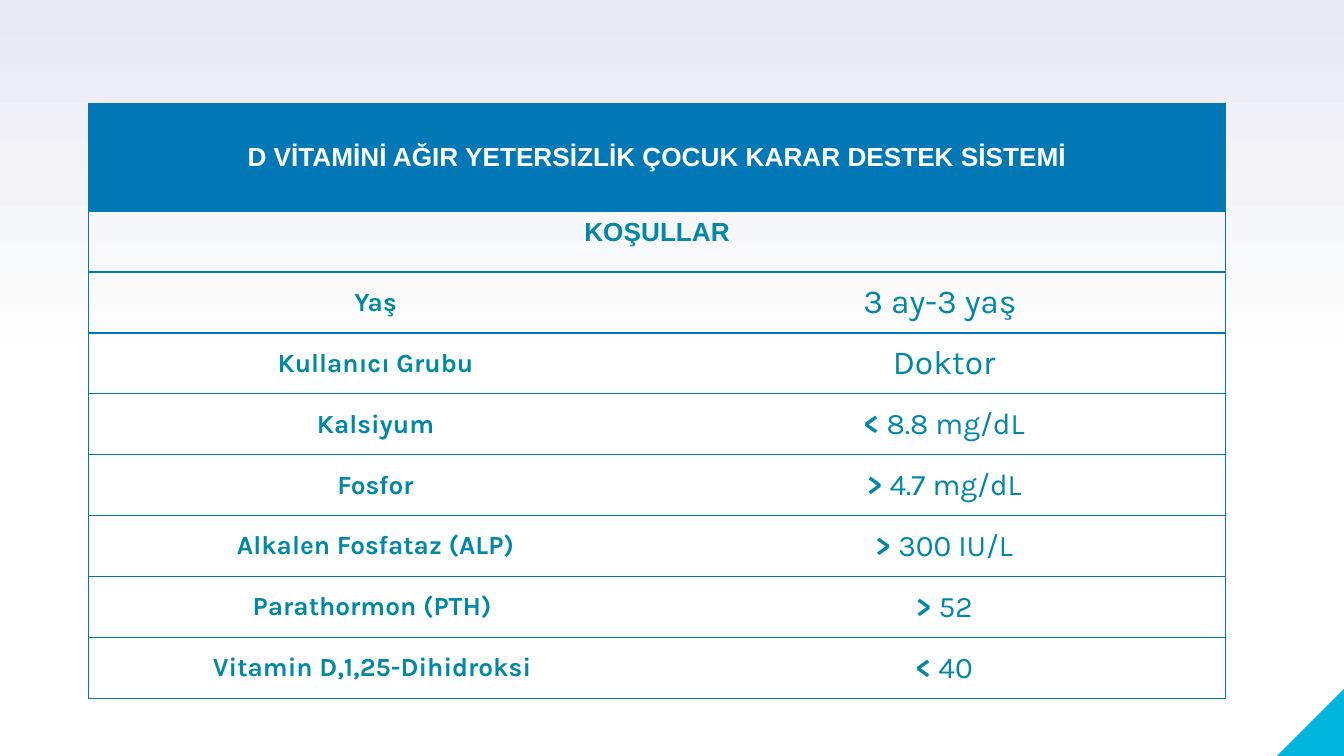
from lxml.etree import SubElement
from pptx import Presentation
from pptx.dml.color import RGBColor
from pptx.enum.shapes import MSO_SHAPE as Shape
from pptx.enum.text import MSO_ANCHOR as Anchor, PP_ALIGN as Align
from pptx.oxml.ns import qn
from pptx.util import Inches, Pt

COLORS = {"header": "0078B5", "text": "0088A6", "corner": "00B5DD",
          "white": "FFFFFF", "haze": "E9EAF2"}
TITLE = "D VİTAMİNİ AĞIR YETERSİZLİK ÇOCUK KARAR DESTEK SİSTEMİ"
SUBTITLE = "KOŞULLAR"
CONDITIONS = [
    ("Yaş", "", "3 ay-3 yaş ", 18),
    ("Kullanıcı Grubu", "", "Doktor", 18),
    ("Kalsiyum", "<", " 8.8 mg/dL", 16),
    ("Fosfor", ">", " 4.7 mg/dL", 16),
    ("Alkalen Fosfataz (ALP)", ">", " 300 IU/L", 16),
    ("Parathormon (PTH) ", ">", " 52", 16),
    ("Vitamin D,1,25-Dihidroksi ", "<", " 40", 16),
]
WIDTH = 10
HEIGHT = WIDTH * 9 / 16
LEFT, TOP, TABLE_HEIGHT = 0.66, 0.77, 4.43
COLUMNS = (4.27, 4.19)
HEADER_HEIGHT = 0.8
CORNER = 0.51


def rgb(name):
    return RGBColor.from_string(COLORS[name])


def draw_borders(cell, sides):
    properties = cell._tc.get_or_add_tcPr()
    for side in "LRTB":
        line = SubElement(properties, qn(f"a:ln{side}"), w=str(Pt(0.75)))
        if side in sides:
            fill = SubElement(line, qn("a:solidFill"))
            SubElement(fill, qn("a:srgbClr"), val=COLORS["header"])
        else:
            SubElement(line, qn("a:noFill"))


def write(cell, pieces, color="text", anchor=Anchor.MIDDLE):
    cell.vertical_anchor = anchor
    para = cell.text_frame.paragraphs[0]
    para.alignment = Align.CENTER
    for text, font, size, bold in pieces:
        span = para.add_run()
        span.text = text
        span.font.name = font
        span.font.size = Pt(size)
        span.font.bold = bold
        span.font.color.rgb = rgb(color)


deck = Presentation()
deck.slide_width, deck.slide_height = Inches(WIDTH), Inches(HEIGHT)
page = deck.slides.add_slide(deck.slide_layouts[6])

backdrop = page.background.fill
backdrop.gradient()
backdrop.gradient_angle = 90
for stop, (position, color) in zip(backdrop.gradient_stops, [(0.5, "white"), (1, "haze")]):
    stop.position = position
    stop.color.rgb = rgb(color)

corner = page.shapes.add_shape(
    Shape.RIGHT_TRIANGLE, Inches(WIDTH - CORNER + 0.01), Inches(HEIGHT - CORNER),
    Inches(CORNER), Inches(CORNER))
corner.rotation = 270
corner.shadow.inherit = False
corner.fill.solid()
corner.fill.fore_color.rgb = rgb("corner")
corner.line.fill.background()

row_count = len(CONDITIONS) + 2
table = page.shapes.add_table(
    row_count, len(COLUMNS), Inches(LEFT), Inches(TOP),
    Inches(sum(COLUMNS)), Inches(TABLE_HEIGHT)).table
table.first_row = table.horz_banding = False
for column, width in zip(table.columns, COLUMNS):
    column.width = Inches(width)
row_height = (TABLE_HEIGHT - HEADER_HEIGHT) / (row_count - 1)
for index, row in enumerate(table.rows):
    row.height = Inches(row_height if index else HEADER_HEIGHT)
    for cell, sides in zip(row.cells, ("LTB", "RTB")):
        draw_borders(cell, "LRTB" if index < 2 else sides)
        if index:
            cell.fill.background()
        else:
            cell.fill.solid()
            cell.fill.fore_color.rgb = rgb("header")

for index in range(2):
    table.cell(index, 0).merge(table.cell(index, 1))
write(table.cell(0, 0), [(TITLE, "Arial", 14, True)], "white")
write(table.cell(1, 0), [(SUBTITLE, "Arial", 14, True)], anchor=Anchor.TOP)
for index, (label, sign, value, size) in enumerate(CONDITIONS, start=2):
    write(table.cell(index, 0), [(label, "Karla", 14, True)])
    pieces = [(sign, "Karla", size, True)] if sign else []
    write(table.cell(index, 1), pieces + [(value, "Karla", size, False)])

deck.save("out.pptx")
